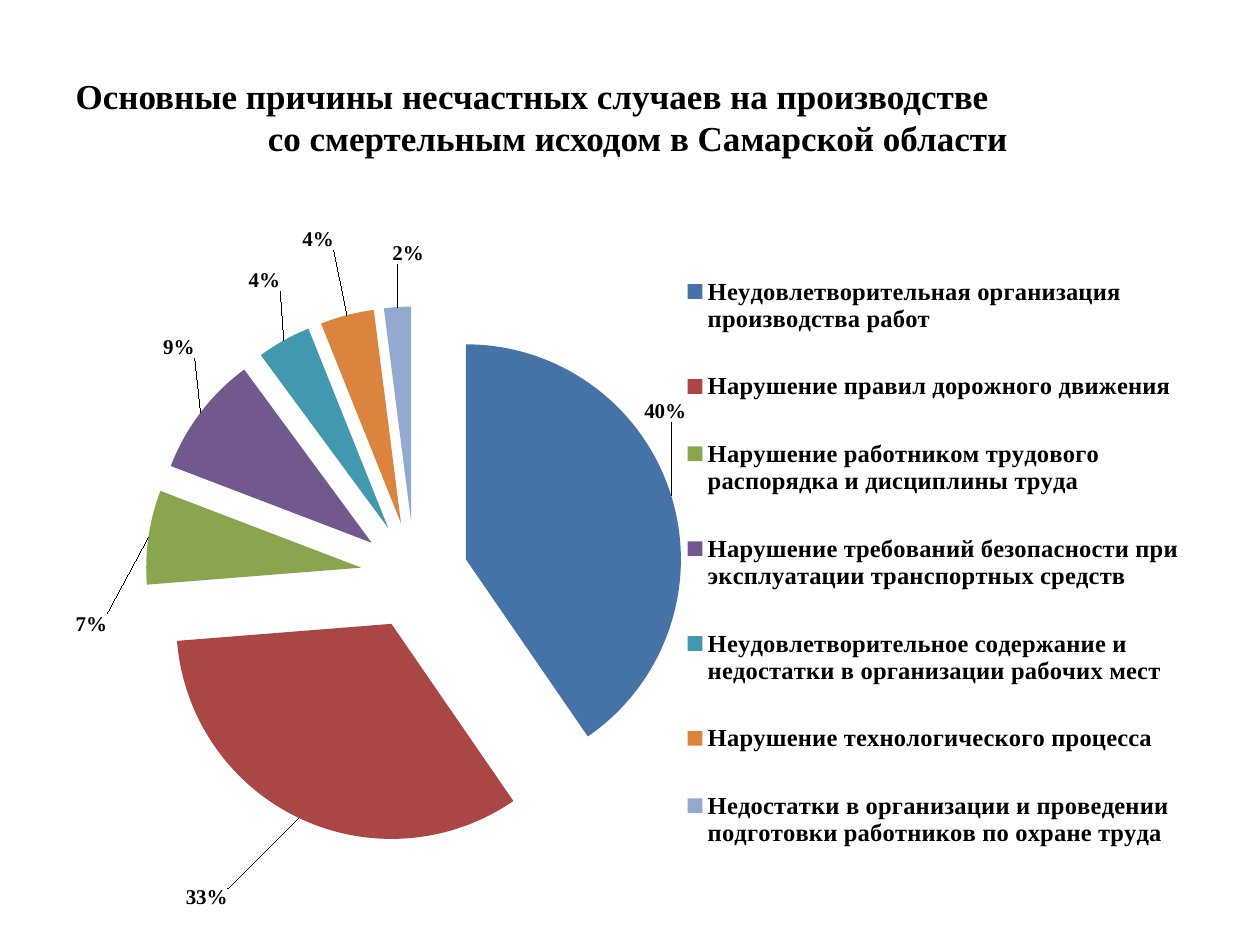
import pptx
import pptx.chart.data
import pptx.dml.color
import pptx.enum.chart
import pptx.enum.text
import pptx.oxml
import pptx.oxml.ns
import pptx.util

Pt = pptx.util.Pt
qn = pptx.oxml.ns.qn
FONT = "Times New Roman"
COLORS = {
    "text": "000000",
    "organization": "4572A7",
    "traffic": "AA4643",
    "discipline": "89A54E",
    "transport": "71588F",
    "workplace": "4198AF",
    "process": "DB843D",
    "training": "93A9CF",
}
CAUSES = [
    ("organization", "Неудовлетворительная организация производства работ", 40, (-0.03, -0.1)),
    ("traffic", "Нарушение правил дорожного движения", 33, (-0.06, 0.09)),
    ("discipline", "Нарушение работником трудового распорядка и дисциплины труда", 7, (-0.03, 0.14)),
    ("transport", "Нарушение требований безопасности при эксплуатации транспортных средств", 9, (0, -0.07)),
    ("workplace", "Неудовлетворительное содержание и недостатки в организации рабочих мест", 4, (0, -0.06)),
    ("process", "Нарушение технологического процесса", 4, (-0.01, -0.08)),
    ("training", "Недостатки в организации и проведении подготовки работников по охране труда", 2, (0.01, -0.05)),
]


def format_font(font, size, bold=True, name=FONT, color="text"):
    font.name = name
    font.size = Pt(size)
    font.bold = bold
    font.color.rgb = pptx.dml.color.RGBColor.from_string(COLORS[color])


def manual_layout(**settings):
    layout = pptx.oxml.parse_xml(
        '<c:layout xmlns:c="http://schemas.openxmlformats.org/drawingml/2006/chart">'
        "<c:manualLayout/></c:layout>"
    )
    for tag, value in settings.items():
        layout[0].append(layout.makeelement(qn("c:" + tag), {"val": str(value)}))
    return layout


deck = pptx.Presentation()
deck.slide_width, deck.slide_height = Pt(720), Pt(540)
page = deck.slides.add_slide(deck.slide_layouts[5])

title = page.shapes.title
title.left, title.top, title.width, title.height = Pt(36), Pt(21.6), Pt(648), Pt(90)
frame = title.text_frame
frame.word_wrap = True
frame.vertical_anchor = pptx.enum.text.MSO_ANCHOR.MIDDLE
frame.text = "Основные причины несчастных случаев на производстве\nсо смертельным исходом в Самарской области"
alignments = (pptx.enum.text.PP_ALIGN.LEFT, pptx.enum.text.PP_ALIGN.CENTER)
for para, alignment in zip(frame.paragraphs, alignments):
    para.alignment = alignment
    para.space_before = Pt(0)
    format_font(para.runs[0].font, 20)
frame.paragraphs[1]._p.get_or_add_pPr().set("marL", str(Pt(9)))

data = pptx.chart.data.CategoryChartData(number_format="0")
data.categories = [cause for _, cause, _, _ in CAUSES]
data.add_series("Series 1", [value for _, _, value, _ in CAUSES])
chart = page.shapes.add_chart(
    pptx.enum.chart.XL_CHART_TYPE.PIE, Pt(36), Pt(111.6), Pt(648), Pt(407.5), data
).chart
format_font(chart.font, 10, bold=False, name="Calibri")
chart.has_title = False

plot_area = chart._chartSpace.chart.plotArea
for old_layout in plot_area.findall(qn("c:layout")):
    plot_area.remove(old_layout)
plot_area.insert(0, manual_layout(
    layoutTarget="inner", xMode="edge", yMode="edge", x=0.066, y=0.156, w=0.488, h=0.754
))

chart.has_legend = True
legend = chart.legend
legend.position = pptx.enum.chart.XL_LEGEND_POSITION.RIGHT
legend.include_in_layout = False
format_font(legend.font, 14)
for old_layout in legend._element.findall(qn("c:layout")):
    legend._element.remove(old_layout)
legend._element.find(qn("c:legendPos")).addnext(manual_layout(
    xMode="edge", yMode="edge", x=0.54, y=0.06, w=0.455, h=0.91
))

plot = chart.plots[0]
plot.vary_by_categories = True
series = plot.series[0]
series_name = series._element.find(qn("c:tx"))
series_name.addnext(series_name.makeelement(qn("c:explosion"), {"val": "25"}))

labels = series.data_labels
labels.show_percentage = True
labels.show_value = False
labels.show_legend_key = False
labels.number_format = "0%"
labels.number_format_is_linked = False
labels.position = pptx.enum.chart.XL_LABEL_POSITION.OUTSIDE_END
format_font(labels.font, 12)
leader_lines = labels._element.find(qn("c:showLeaderLines"))
if leader_lines is not None:
    leader_lines.set("val", "1")

for index, (key, _, _, (shift_x, shift_y)) in enumerate(CAUSES):
    point = series.points[index]
    point.format.fill.solid()
    point.format.fill.fore_color.rgb = pptx.dml.color.RGBColor.from_string(COLORS[key])
    label = point.data_label
    format_font(label.font, 12)
    label.position = pptx.enum.chart.XL_LABEL_POSITION.OUTSIDE_END
    element = labels._element.findall(qn("c:dLbl"))[index]
    element.find(qn("c:showVal")).set("val", "0")
    element.find(qn("c:showPercent")).set("val", "1")
    element.find(qn("c:idx")).addnext(manual_layout(x=shift_x, y=shift_y))

deck.save("out.pptx")
